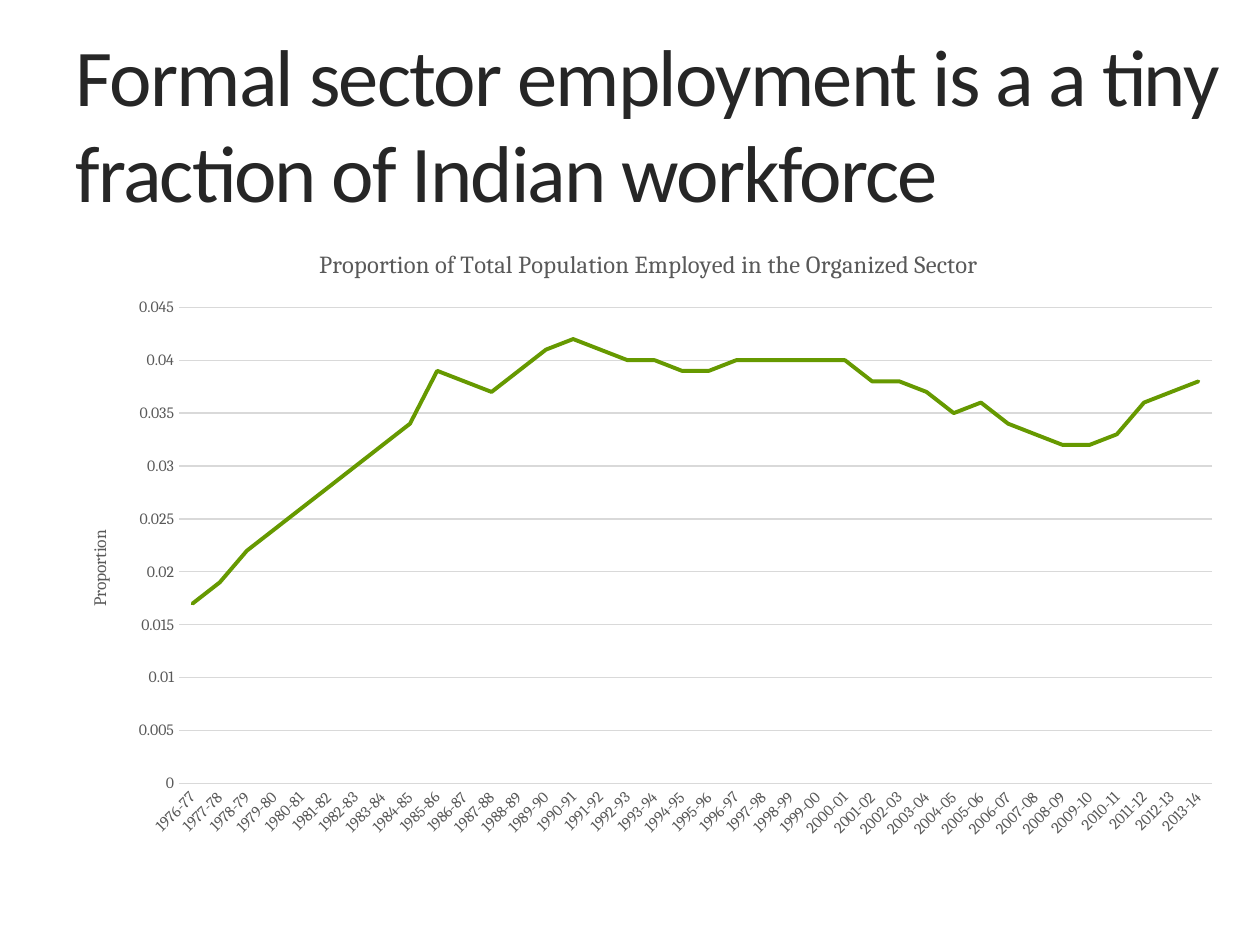
from typing import NamedTuple

from lxml import etree
from pptx import Presentation
from pptx.chart.data import CategoryChartData
from pptx.dml.color import RGBColor
from pptx.enum import chart as kinds, text
from pptx.oxml import parse_xml
from pptx.oxml.ns import nsdecls, qn
from pptx.util import Inches, Pt

COLORS = {"ink": "262626", "label": "595959", "grid": "D9D9D9", "line": "669900",
          "paper": "FFFFFF"}


class Style(NamedTuple):
    size: float
    face: str
    color: str


class Box(NamedTuple):
    left: float
    top: float
    width: float
    height: float


HEAD = Style(46, "Calibri", "ink")
CAPTION = Style(14, "Cambria", "label")
AXIS = Style(10, "Cambria", "label")
TICK = Style(9, "Cambria", "label")

# Places on the slide, in inches
TITLE = Box(0.5, 0.3, 9.3, 1.34)
GRAPH = Box(0.5, 1.78, 9.3, 4.97)
PLOT = Box(1.42, 2.44, 8.2, 3.78)

# Proportion per fiscal year, in thousandths
START = 1976
SHARES = [17, 19, 22, 24, 26, 28, 30, 32, 34, 39, 38, 37, 39, 41, 42, 41, 40, 40, 39,
          39, 40, 40, 40, 40, 40, 38, 38, 37, 35, 36, 34, 33, 32, 32, 33, 36, 37, 38]


def color(name: str) -> RGBColor:
    return RGBColor.from_string(COLORS[name])


def set_font(font, style: Style) -> None:
    font.size = Pt(style.size)
    font.name = style.face
    font.bold = False
    font.color.rgb = color(style.color)


def set_line(line, name: str, width: float) -> None:
    line.color.rgb = color(name)
    line.width = Pt(width)


def add_label(owner, words: str, style: Style) -> None:
    """Give a chart or an axis its title."""
    owner.has_title = True
    title = owner.chart_title if hasattr(owner, "chart_title") else owner.axis_title
    par = title.text_frame.paragraphs[0]
    par.text = words
    set_font(par.font, style)


def place_plot(chart, plot: Box, graph: Box) -> None:
    """Fix the inner plot area, as fractions of the chart."""
    area = chart._chartSpace.chart.plotArea
    for old in area.findall(qn("c:layout")):
        area.remove(old)
    layout = parse_xml(f"<c:layout {nsdecls('c')}><c:manualLayout/></c:layout>")
    parts = {"layoutTarget": "inner", "xMode": "edge", "yMode": "edge",
             "x": (plot.left - graph.left) / graph.width,
             "y": (plot.top - graph.top) / graph.height,
             "w": plot.width / graph.width, "h": plot.height / graph.height}
    for tag, val in parts.items():
        etree.SubElement(layout[0], qn(f"c:{tag}")).set("val", str(val))
    area.insert(0, layout)


def add_head(slide) -> None:
    head = slide.shapes.title
    head.left, head.top, head.width, head.height = map(Inches, TITLE)
    head.fill.solid()
    head.fill.fore_color.rgb = color("paper")
    frame = head.text_frame
    frame.text = "Formal sector employment is a a tiny fraction of Indian workforce"
    frame.word_wrap = True
    frame.auto_size = text.MSO_AUTO_SIZE.NONE
    frame.vertical_anchor = text.MSO_ANCHOR.MIDDLE
    par = frame.paragraphs[0]
    par.alignment = text.PP_ALIGN.LEFT
    set_font(par.font, HEAD)
    # Tighten the letters by one point
    par.runs[0]._r.get_or_add_rPr().set("spc", "-100")


def add_graph(slide) -> None:
    data = CategoryChartData()
    years = range(START, START + len(SHARES))
    data.categories = [f"{y}-{(y + 1) % 100:02d}" for y in years]
    data.add_series("Series 1", [n / 1000 for n in SHARES])
    chart = slide.shapes.add_chart(
        kinds.XL_CHART_TYPE.LINE, *map(Inches, GRAPH), data).chart
    set_font(chart.font, AXIS)
    chart.has_legend = False
    add_label(chart, "Proportion of Total Population Employed in the Organized Sector",
              CAPTION)
    place_plot(chart, PLOT, GRAPH)

    # Series
    chart.plots[0].vary_by_categories = False
    series = chart.plots[0].series[0]
    series.smooth = False
    series.marker.style = kinds.XL_MARKER_STYLE.NONE
    set_line(series.format.line, "line", 2.25)
    series.format.line._get_or_add_ln().set("cap", "rnd")

    # Axes
    years_axis, share_axis = chart.category_axis, chart.value_axis
    for axis in (years_axis, share_axis):
        axis.major_tick_mark = axis.minor_tick_mark = kinds.XL_TICK_MARK.NONE
        set_font(axis.tick_labels.font, TICK)
    set_line(years_axis.format.line, "grid", 0.75)
    years_axis._element.find(qn("c:txPr")).find(qn("a:bodyPr")).set("rot", "-2700000")
    share_axis.minimum_scale, share_axis.maximum_scale = 0, 0.045
    share_axis.major_unit = 0.005
    share_axis.tick_labels.number_format = "General"
    share_axis.tick_labels.number_format_is_linked = False
    share_axis.format.line.fill.background()
    set_line(share_axis.major_gridlines.format.line, "grid", 0.75)
    add_label(share_axis, "Proportion", AXIS)
    share_axis.axis_title.text_frame._txBody.bodyPr.set("rot", "-5400000")


def main() -> None:
    deck = Presentation()
    deck.slide_width, deck.slide_height = Inches(10), Inches(7.5)
    slide = deck.slides.add_slide(deck.slide_layouts[5])
    add_head(slide)
    add_graph(slide)
    deck.save("out.pptx")


if __name__ == "__main__":
    main()
